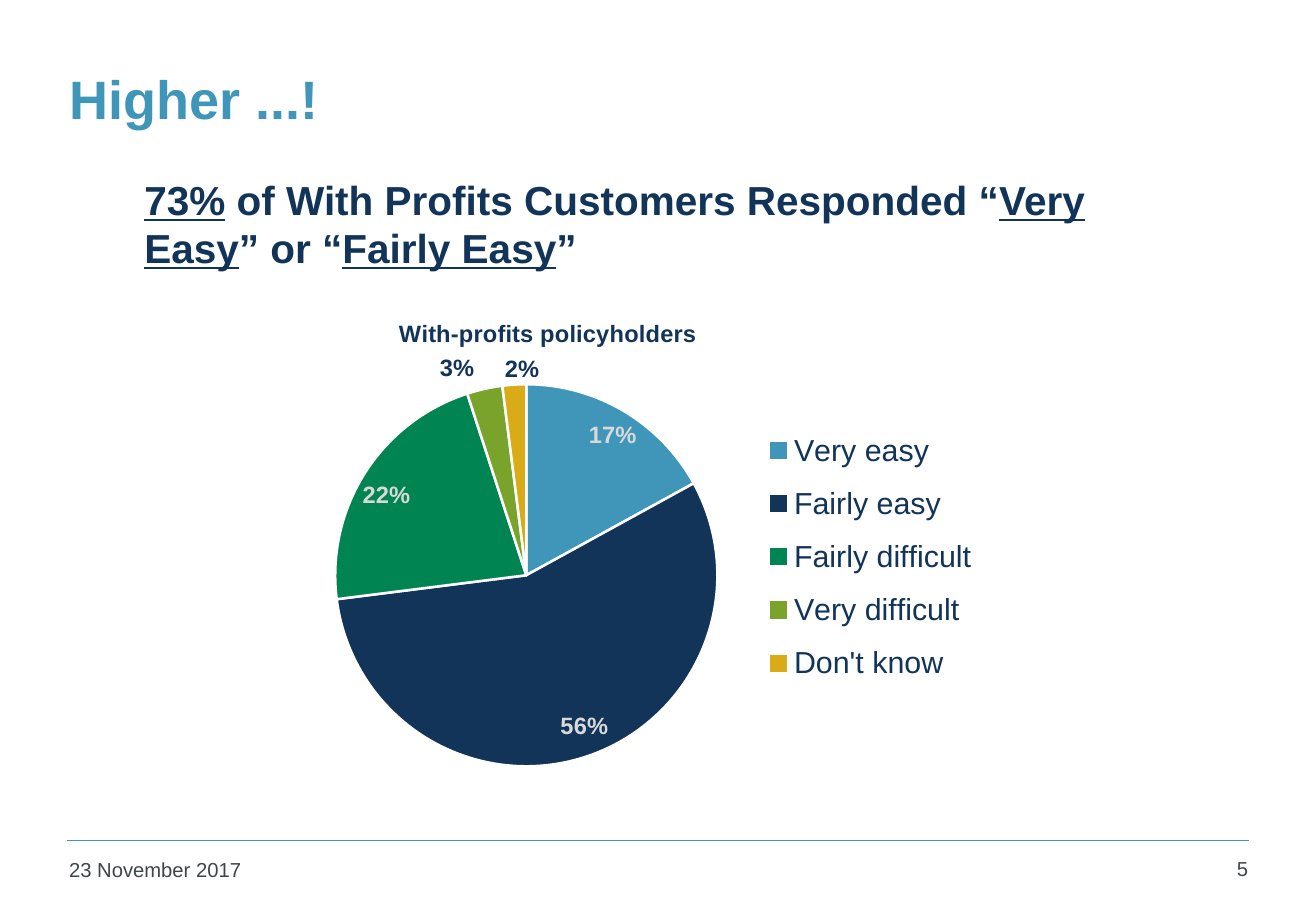
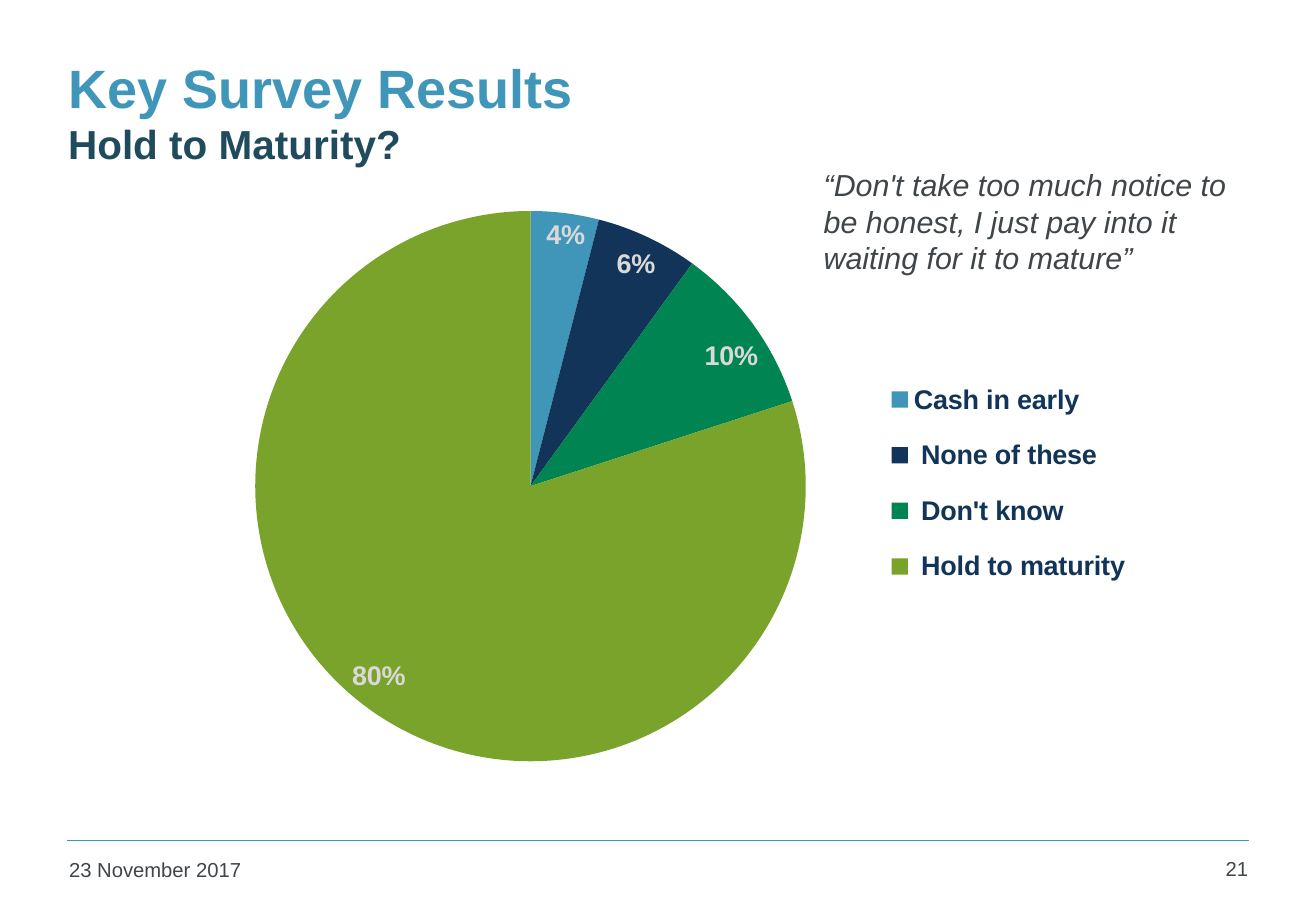
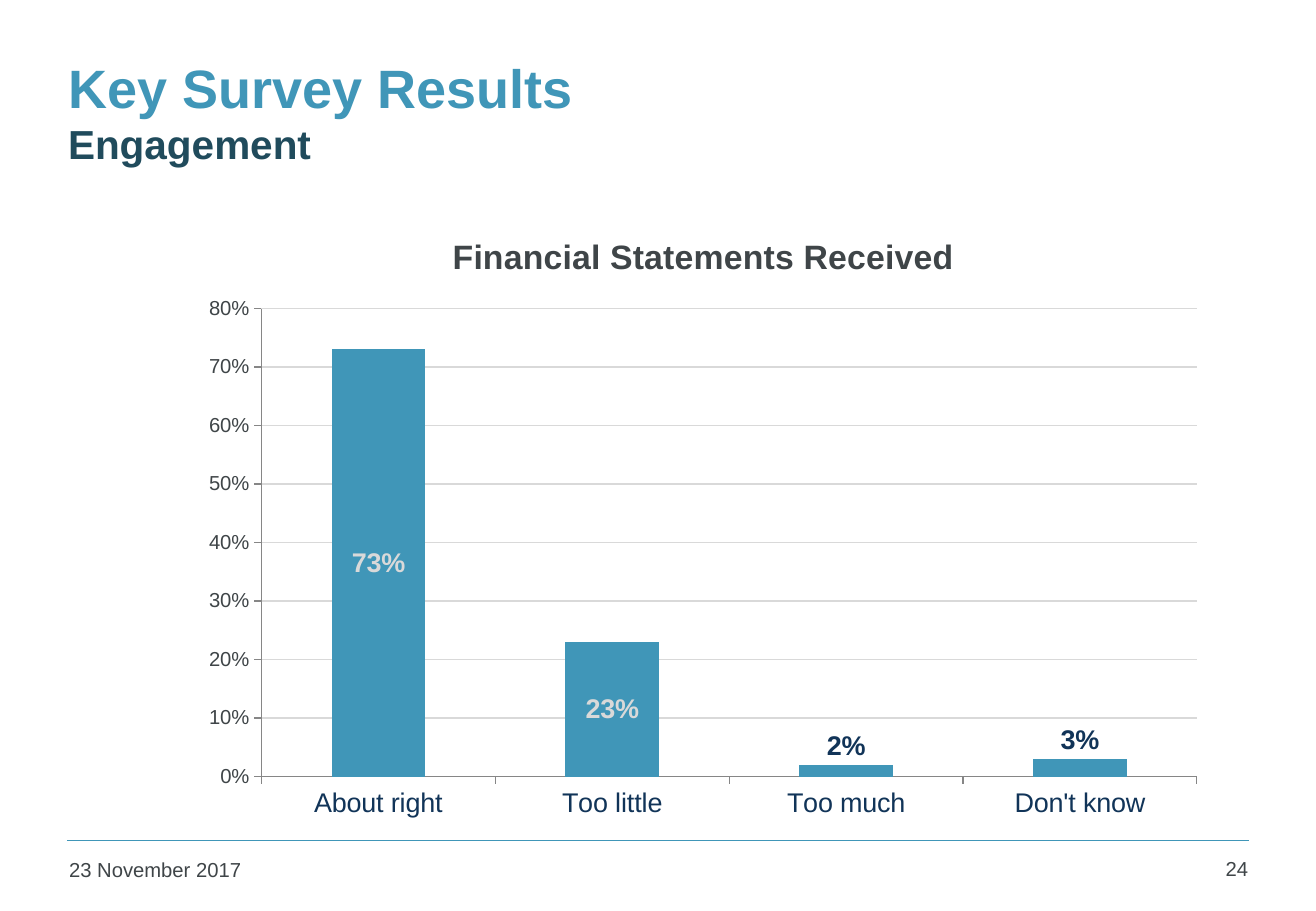
"""Build three survey result slides with native charts."""
from lxml import etree
from pptx import Presentation
from pptx.chart.data import CategoryChartData
from pptx.dml.color import RGBColor
from pptx.enum.chart import XL_CHART_TYPE, XL_LABEL_POSITION, XL_LEGEND_POSITION, XL_TICK_MARK
from pptx.enum.shapes import MSO_CONNECTOR
from pptx.enum.text import MSO_ANCHOR, MSO_AUTO_SIZE, PP_ALIGN
from pptx.oxml import parse_xml
from pptx.oxml.ns import nsdecls, qn
from pptx.util import Emu, Pt

PIE, COLUMN = XL_CHART_TYPE.PIE, XL_CHART_TYPE.COLUMN_CLUSTERED
OUTSIDE, INSIDE, CENTER = (XL_LABEL_POSITION.OUTSIDE_END, XL_LABEL_POSITION.INSIDE_END,
                           XL_LABEL_POSITION.CENTER)
LEGEND_RIGHT = XL_LEGEND_POSITION.RIGHT
TICK_OUTSIDE = XL_TICK_MARK.OUTSIDE
STRAIGHT = MSO_CONNECTOR.STRAIGHT
LEFT, RIGHT = PP_ALIGN.LEFT, PP_ALIGN.RIGHT
TOP, MIDDLE = MSO_ANCHOR.TOP, MSO_ANCHOR.MIDDLE
NO_AUTOSIZE = MSO_AUTO_SIZE.NONE

EMU_PER_PX = 9144
SLIDE_SIZE = (1083, 750)
FONT = "Arial"
BLUE = RGBColor(0x40, 0x96, 0xB8)
NAVY = RGBColor(0x11, 0x34, 0x58)
GREEN = RGBColor(0x00, 0x84, 0x52)
LIME = RGBColor(0x79, 0xA3, 0x2A)
GOLD = RGBColor(0xD9, 0xAB, 0x16)
TEAL = RGBColor(0x20, 0x4B, 0x5C)
GREY = RGBColor(0x3F, 0x45, 0x48)
PALE = RGBColor(0xD9, 0xD9, 0xD9)
AXIS_GREY = RGBColor(0x86, 0x86, 0x86)
WHITE = RGBColor(0xFF, 0xFF, 0xFF)
PIE_COLORS = (BLUE, NAVY, GREEN, LIME, GOLD)

DATE = "23 November 2017"
DATE_BOX = (47, 701, 239, 36)
NUMBER_BOX = (960, 700, 77, 37)
FOOTER_LINE = (55, 692, 1028, 692)
RESULTS_TITLE_BOX = (46, 29, 982, 125)

UNDERLINED = {"underline": True}
SLIDES = [
    {
        "number": 5, "title": "Higher ...!", "title_box": (47, 44, 982, 125), "title_bottom": 56,
        "text": [("73%", UNDERLINED), (" of With Profits Customers Responded “", {}),
                 ("Very Easy", UNDERLINED), ("” or “", {}), ("Fairly Easy", UNDERLINED), ("”", {})],
        "text_box": (109, 139, 850, 71),
        "text_format": {"size": 24, "color": NAVY, "bold": True},
        "chart": {
            "kind": PIE, "box": (164, 241, 699, 435), "title": "With-profits policyholders",
            "title_format": {"size": 14, "color": NAVY, "bold": True}, "title_place": (0.23, 0.04),
            "values": {"Very easy": 17, "Fairly easy": 56, "Fairly difficult": 22,
                       "Very difficult": 3, "Don't know": 2},
            "outside": (3, 4), "label_size": 14, "border": WHITE,
            "label_shifts": ((0.02, 0.01), (0.03, -0.02), (-0.01, 0.01), (-0.01, 0), (0.01, 0.01)),
            "plot_place": (0.16, 0.17, 0.45, 0.73), "legend_place": (0.63, 0.23, 0.32, 0.54),
            "legend_format": {"size": 18, "color": NAVY},
        },
    },
    {
        "number": 21, "title": "Key Survey Results", "subtitle": "Hold to Maturity?",
        "title_box": RESULTS_TITLE_BOX,
        "text": [("“Don't take too much notice to be honest, I just pay into it "
                  "waiting for it to mature”", {})],
        "text_box": (668, 132, 368, 101),
        "text_format": {"size": 18, "italic": True},
        "chart": {
            "kind": PIE, "box": (116, 131, 855, 513),
            "values": {"Cash in early": 4, " None of these": 6, " Don't know": 10,
                       " Hold to maturity": 80},
            "outside": (), "label_size": 16,
            "label_shifts": ((0.02, 0), (0.01, 0.01), (0.01, 0.02), (-0.02, -0.02)),
            "plot_place": (0.11, 0.08, 0.53, 0.89), "legend_place": (0.71, 0.32, 0.25, 0.4),
            "legend_format": {"size": 16, "color": NAVY, "bold": True},
        },
    },
    {
        "number": 24, "title": "Key Survey Results", "subtitle": "Engagement",
        "title_box": RESULTS_TITLE_BOX,
        "chart": {
            "kind": COLUMN, "box": (156, 178, 846, 507), "title": "Financial Statements Received",
            "title_format": {"size": 20, "bold": True}, "title_place": (0.25, 0.02),
            "values": {"About right": 0.73, "Too little": 0.23, "Too much": 0.02,
                       "Don't know": 0.03},
            "outside": (2, 3), "label_size": 16, "plot_place": (0.07, 0.15, 0.91, 0.76),
        },
    },
]


def px(*lengths):
    return [Emu(length * EMU_PER_PX) for length in lengths]


def format_font(font, size=12, color=GREY, bold=False, italic=False, underline=False):
    font.name, font.size = FONT, Pt(size)
    font.bold, font.italic, font.underline = bold, italic, underline
    font.color.rgb = color


def write_text(frame, paragraphs, align=LEFT, anchor=TOP, **base):
    frame.word_wrap = True
    frame.auto_size = NO_AUTOSIZE
    frame.vertical_anchor = anchor
    for index, runs in enumerate(paragraphs):
        paragraph = frame.add_paragraph() if index else frame.paragraphs[0]
        paragraph.alignment = align
        for text, changes in runs:
            run = paragraph.add_run()
            run.text = text
            format_font(run.font, **{**base, **changes})


def add_text(slide, box, runs, **text_format):
    write_text(slide.shapes.add_textbox(*px(*box)).text_frame, [runs], **text_format)


def add_title(slide, content):
    title = slide.shapes.title
    title.left, title.top, title.width, title.height = px(*content["title_box"])
    paragraphs = [[(content["title"], {})]]
    if "subtitle" in content:
        paragraphs.append([(content["subtitle"], {"size": 24, "color": TEAL})])
    write_text(title.text_frame, paragraphs, anchor=MIDDLE, size=32, color=BLUE, bold=True)
    if "title_bottom" in content:
        title.text_frame.margin_bottom = px(content["title_bottom"])[0]


def add_footer(slide, number):
    line = slide.shapes.add_connector(STRAIGHT, *px(*FOOTER_LINE))
    line.line.color.rgb = BLUE
    line.line.width = Pt(1)
    etree.SubElement(line.element.spPr, qn("a:effectLst"))
    add_text(slide, DATE_BOX, [(DATE, {})])
    add_text(slide, NUMBER_BOX, [(str(number), {})], align=RIGHT)


def place_part(parent, index, place, inner=False, relative=False):
    for layout in parent.findall(qn("c:layout")):
        parent.remove(layout)
    target = '<c:layoutTarget val="inner"/>' if inner else ""
    modes = "" if relative else "".join(f'<c:{axis}Mode val="edge"/>' for axis in "xy")
    sizes = "".join(f'<c:{name} val="{value}"/>' for name, value in zip("xywh", place))
    parent.insert(index, parse_xml(
        f'<c:layout {nsdecls("c")}><c:manualLayout>{target}{modes}{sizes}'
        "</c:manualLayout></c:layout>"))


def format_labels(chart, series, content):
    is_pie = content["kind"] == PIE
    size = content["label_size"]
    inner_position = INSIDE if is_pie else CENTER
    labels = series.data_labels
    labels.show_percentage, labels.show_value = is_pie, not is_pie
    labels.number_format, labels.number_format_is_linked = "0%", False
    labels.position = inner_position
    format_font(labels.font, size=size, color=PALE, bold=True)
    for index in range(len(content["values"])):
        is_outside = index in content["outside"]
        label = series.points[index].data_label
        format_font(label.font, size=size, color=NAVY if is_outside else PALE, bold=True)
        label.position = OUTSIDE if is_outside else inner_position
    if is_pie:
        for name, value in (("showVal", "0"), ("showPercent", "1")):
            for flag in chart.element.xpath(f".//c:dLbl/c:{name}"):
                flag.set("val", value)
        for flag in chart.element.xpath(".//c:showLeaderLines"):
            flag.set("val", "0")
        for label, shift in zip(chart.element.xpath(".//c:dLbl"), content["label_shifts"]):
            place_part(label, 1, shift, relative=True)


def format_pie(chart, series, content):
    chart.plots[0].vary_by_categories = True
    for index in range(len(content["values"])):
        point_format = series.points[index].format
        point_format.fill.solid()
        point_format.fill.fore_color.rgb = PIE_COLORS[index]
        if "border" in content:
            point_format.line.color.rgb = content["border"]
            point_format.line.width = Pt(1.5)
        else:
            point_format.line.fill.background()
    chart.has_legend = True
    chart.legend.position = LEGEND_RIGHT
    chart.legend.include_in_layout = False
    format_font(chart.legend.font, **content["legend_format"])
    place_part(chart.element.xpath(".//c:legend")[0], 1, content["legend_place"])


def format_columns(chart, series):
    chart.has_legend = False
    chart.plots[0].vary_by_categories = False
    chart.plots[0].gap_width = 150
    series.format.fill.solid()
    series.format.fill.fore_color.rgb = BLUE
    for axis, size, color in ((chart.category_axis, 16, NAVY), (chart.value_axis, 12, GREY)):
        axis.major_tick_mark = TICK_OUTSIDE
        axis.format.line.color.rgb = AXIS_GREY
        axis.format.line.width = Pt(0.75)
        format_font(axis.tick_labels.font, size=size, color=color)
    axis = chart.value_axis
    axis.minimum_scale, axis.maximum_scale, axis.major_unit = 0, 0.8, 0.1
    axis.tick_labels.number_format = "0%"
    axis.tick_labels.number_format_is_linked = False
    axis.has_major_gridlines = True
    axis.major_gridlines.format.line.color.rgb = PALE
    axis.major_gridlines.format.line.width = Pt(0.75)


def add_chart(slide, content):
    is_pie = content["kind"] == PIE
    data = CategoryChartData(number_format="General" if is_pie else "0%")
    data.categories = list(content["values"])
    data.add_series("Series 1", content["values"].values())
    chart = slide.shapes.add_chart(content["kind"], *px(*content["box"]), data).chart
    format_font(chart.font, size=10)
    series = chart.plots[0].series[0]
    if is_pie:
        format_pie(chart, series, content)
    else:
        format_columns(chart, series)
    format_labels(chart, series, content)
    chart.has_title = "title" in content
    if chart.has_title:
        run = chart.chart_title.text_frame.paragraphs[0].add_run()
        run.text = content["title"]
        format_font(run.font, **content["title_format"])
        place_part(chart.element.xpath("./c:chart/c:title")[0], 1, content["title_place"])
    place_part(chart.element.xpath(".//c:plotArea")[0], 0, content["plot_place"], inner=True)


def main():
    presentation = Presentation()
    presentation.slide_width, presentation.slide_height = px(*SLIDE_SIZE)
    title_only = presentation.slide_layouts[5]
    for content in SLIDES:
        slide = presentation.slides.add_slide(title_only)
        add_title(slide, content)
        add_footer(slide, content["number"])
        add_chart(slide, content["chart"])
        if "text" in content:
            add_text(slide, content["text_box"], content["text"], **content["text_format"])
    presentation.save("out.pptx")


if __name__ == "__main__":
    main()
